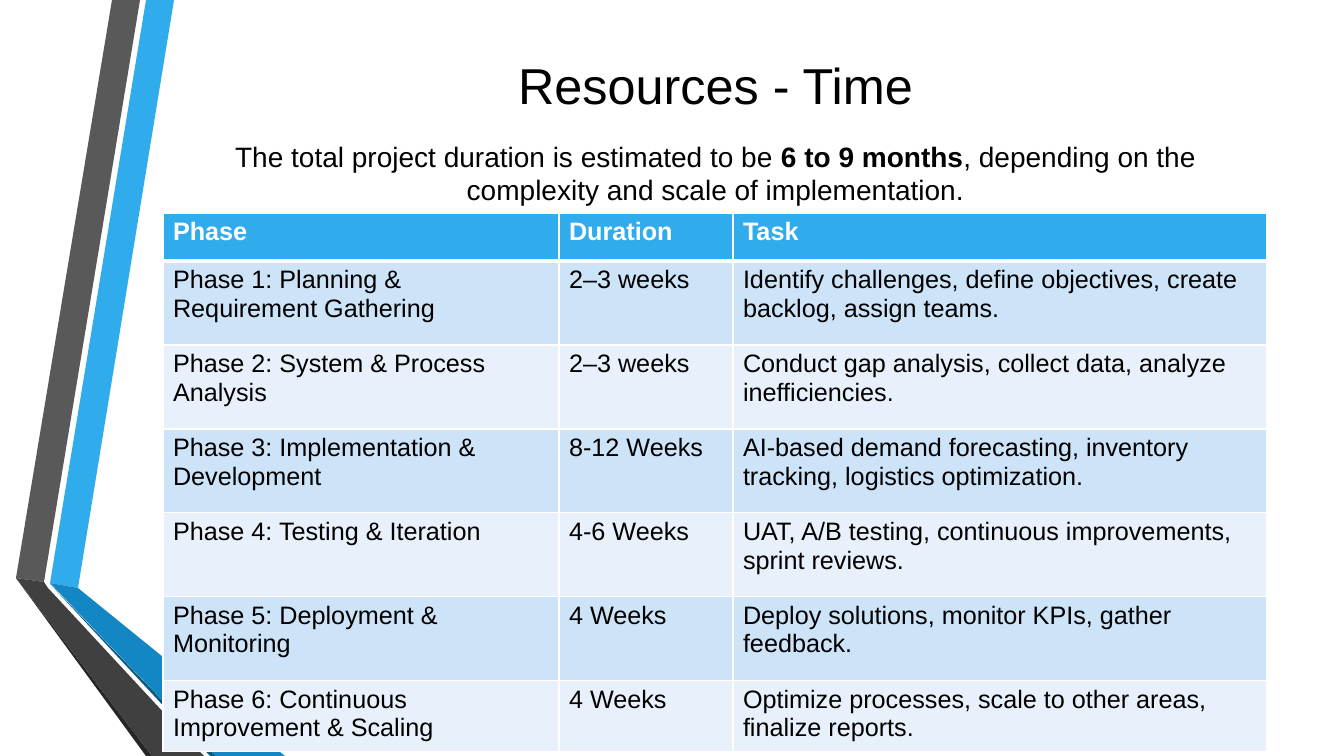
from dataclasses import dataclass

from lxml import etree
from pptx import Presentation
from pptx import util as u
from pptx.dml.color import RGBColor
from pptx.enum import text
from pptx.oxml.ns import qn

SCALE = 914400 / 100.8  # EMU per px


@dataclass(frozen=True)
class Theme:
    font: str = "Arial"
    black: str = "000000"
    white: str = "FFFFFF"
    blue: str = "30ACEC"
    blue_fold: str = "1287C3"
    blue_edge: str = "0C5A82"
    grey: str = "595959"
    grey_fold: str = "404040"
    grey_edge: str = "262626"
    bands: tuple = ("CDE3F8", "E8F1FB")
    title: int = 36
    intro: int = 20
    cell: int = 18


THEME = Theme()

# Ribbon outlines in px, from back to front
RIBBONS = [
    (THEME.blue, [(50, 583), (78, 588), (174, 0), (146, 0)]),
    (THEME.grey, [(140, 0), (112, 0), (16, 578), (44, 582)]),
    (THEME.grey_edge, [(16, 578), (146, 756), (152, 756)]),
    (THEME.blue_edge, [(50, 584), (210, 756), (216, 756)]),
    (THEME.blue_fold, [(50, 583), (216, 756), (285, 756), (78, 588)]),
    (THEME.grey_fold, [(16, 578), (152, 756), (204, 756), (48, 588), (44, 582)]),
]

COLUMNS = [396, 174, 534]
HEADER_H, ROW_H, LAST_H = 48, 84, 66
PHASES = [
    ("Phase", "Duration", "Task"),
    ("Phase 1: Planning & Requirement Gathering", "2–3 weeks",
     "Identify challenges, define objectives, create backlog, assign teams."),
    ("Phase 2: System & Process Analysis", "2–3 weeks",
     "Conduct gap analysis, collect data, analyze inefficiencies."),
    ("Phase 3: Implementation & Development", "8-12 Weeks",
     "AI-based demand forecasting, inventory tracking, logistics optimization."),
    ("Phase 4: Testing & Iteration", "4-6 Weeks",
     "UAT, A/B testing, continuous improvements, sprint reviews."),
    ("Phase 5: Deployment & Monitoring", "4 Weeks",
     "Deploy solutions, monitor KPIs, gather feedback."),
    ("Phase 6: Continuous Improvement & Scaling", "4 Weeks",
     "Optimize processes, scale to other areas, finalize reports."),
]


def px(n):
    return u.Emu(round(n * SCALE))


def rgb(color):
    return RGBColor.from_string(color)


def add_run(p, content, *, size, color=THEME.black, bold=False):
    r = p.add_run()
    r.text = content
    r.font.name = THEME.font
    r.font.size = u.Pt(size)
    r.font.bold = bold
    r.font.color.rgb = rgb(color)


def add_centred_text(slide, box, runs, size):
    """Add a text box; runs is a list of (content, bold)."""
    sp = slide.shapes.add_textbox(*map(px, box))
    tf = sp.text_frame
    tf.word_wrap = True
    tf.vertical_anchor = text.MSO_ANCHOR.MIDDLE
    p = tf.paragraphs[0]
    p.alignment = text.PP_ALIGN.CENTER
    for content, bold in runs:
        add_run(p, content, size=size, bold=bold)


def add_ribbon(slide, color, points):
    builder = slide.shapes.build_freeform(*points[0], scale=SCALE)
    builder.add_line_segments(points[1:], close=True)
    sp = builder.convert_to_shape()
    sp.shadow.inherit = False
    sp.fill.solid()
    sp.fill.fore_color.rgb = rgb(color)
    sp.line.fill.background()


def set_border(cell, side, width):
    tc_pr = cell._tc.get_or_add_tcPr()
    ln = etree.SubElement(tc_pr, qn(f"a:ln{side}"), w=str(u.Pt(width)))
    fill = etree.SubElement(ln, qn("a:solidFill"))
    etree.SubElement(fill, qn("a:srgbClr"), val=THEME.white)


def fill_cell(cell, content, row):
    header = row == 0
    # Borders: a thick rule divides the header from the body
    for side in "LRTB":
        thick = (row, side) in ((0, "B"), (1, "T"))
        set_border(cell, side, 3 if thick else 1)
    cell.fill.solid()
    cell.fill.fore_color.rgb = rgb(THEME.blue if header else THEME.bands[(row - 1) % 2])
    add_run(cell.text_frame.paragraphs[0], content, size=THEME.cell,
            color=THEME.white if header else THEME.black, bold=header)


def add_phase_table(slide, left, top):
    heights = [HEADER_H] + [ROW_H] * (len(PHASES) - 2) + [LAST_H]
    table = slide.shapes.add_table(
        len(PHASES), len(COLUMNS), px(left), px(top),
        px(sum(COLUMNS)), px(sum(heights))).table
    for column, width in zip(table.columns, COLUMNS):
        column.width = px(width)
    for i, (row, height) in enumerate(zip(table.rows, heights)):
        row.height = px(height)
        for cell, content in zip(row.cells, PHASES[i]):
            fill_cell(cell, content, i)


def main():
    prs = Presentation()
    prs.slide_width, prs.slide_height = px(1344), px(756)
    slide = prs.slides.add_slide(prs.slide_layouts[6])

    # Folded ribbons on the left
    for color, points in RIBBONS:
        add_ribbon(slide, color, points)

    # Title, schedule and introduction
    add_centred_text(slide, (163, 52, 1105, 64), [("Resources - Time", False)], THEME.title)
    add_phase_table(slide, 163, 213)
    add_centred_text(slide, (163, 76, 1105, 194), [
        ("The total project duration is estimated to be ", False),
        ("6 to 9 months", True),
        (", depending on the complexity and scale of implementation.", False),
    ], THEME.intro)

    prs.save("out.pptx")


if __name__ == "__main__":
    main()
